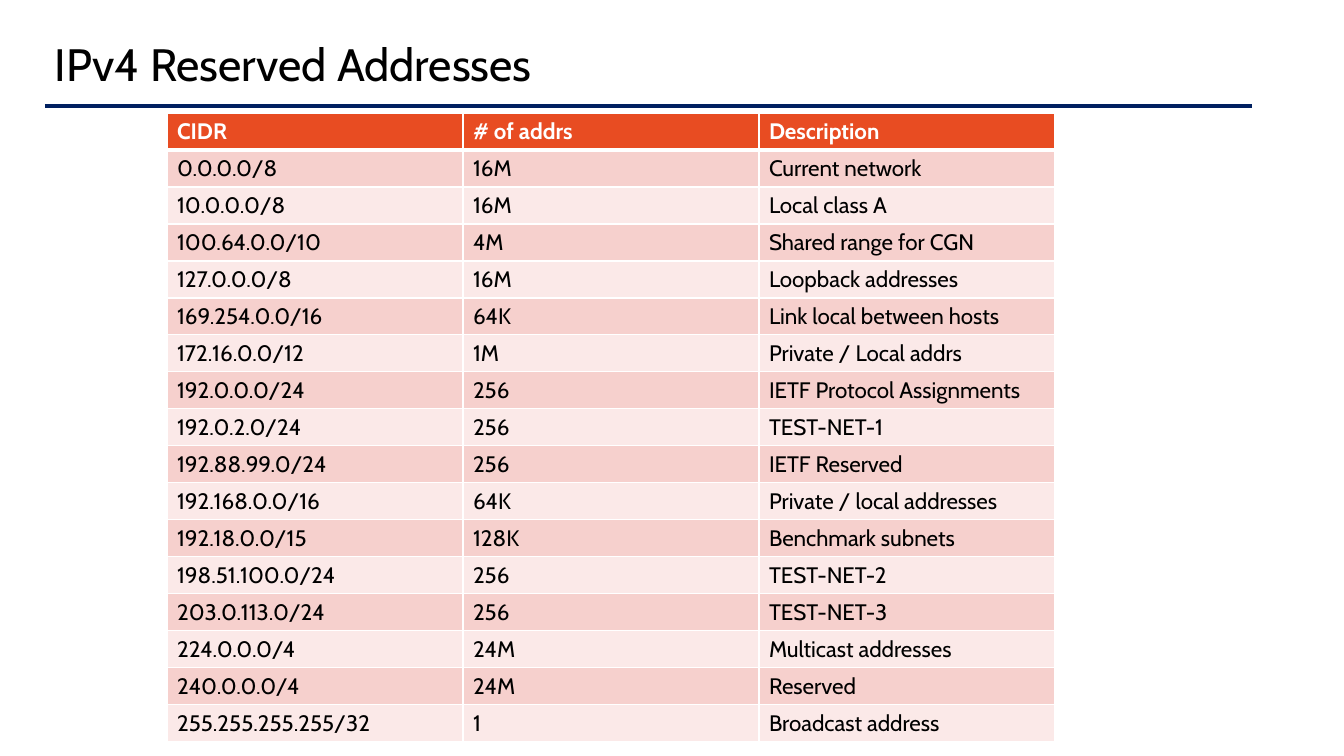
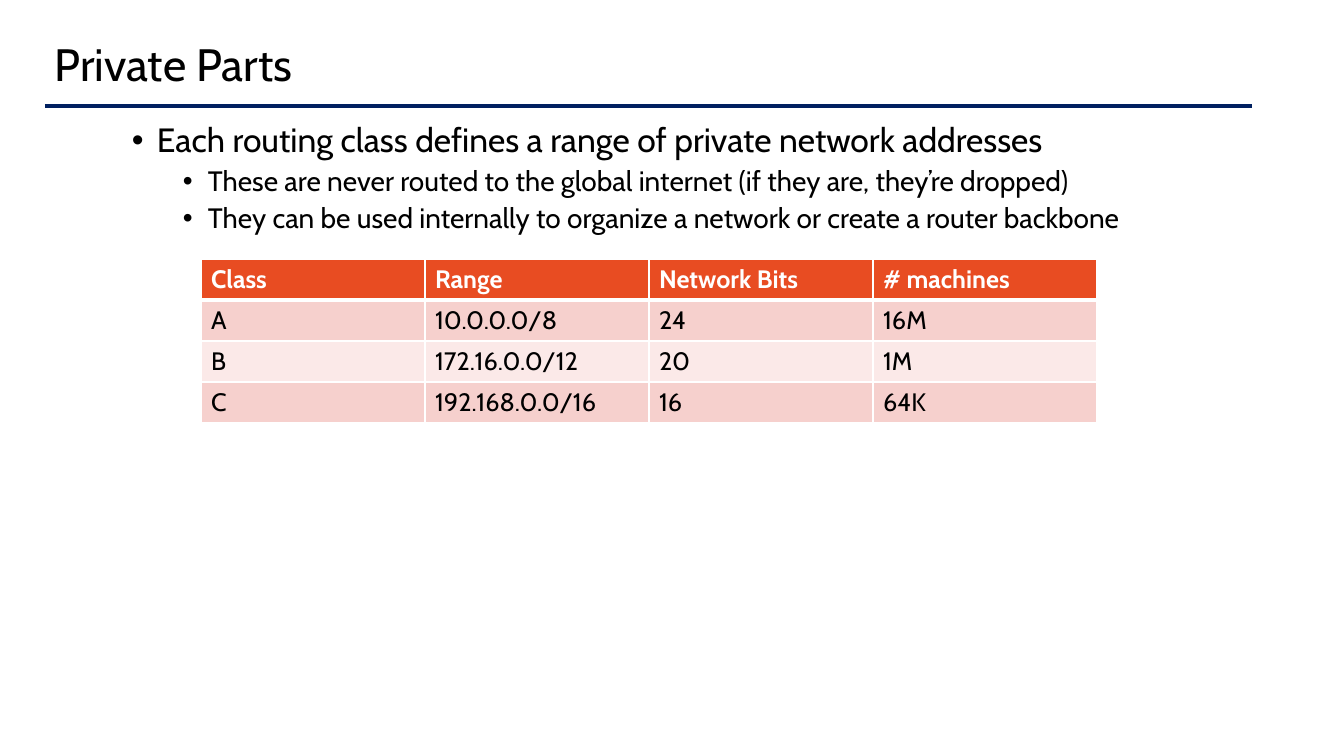
"""Build two slides on reserved and private IPv4 address ranges."""
from lxml.etree import SubElement
from pptx import Presentation
from pptx.dml.color import RGBColor
from pptx.enum.shapes import MSO_CONNECTOR as Connector
from pptx.enum.text import MSO_ANCHOR as Anchor
from pptx.oxml.ns import qn
from pptx.util import Inches, Pt

BLACK = RGBColor(0x00, 0x00, 0x00)
WHITE = RGBColor(0xFF, 0xFF, 0xFF)
NAVY = RGBColor(0x00, 0x20, 0x60)
ORANGE = RGBColor(0xE8, 0x4C, 0x22)
PINK = RGBColor(0xF6, 0xD0, 0xCD)
PALE_PINK = RGBColor(0xFB, 0xE9, 0xE8)
FONT = "Cabin"


def px(count):
    """Turn pixels into EMU."""
    return round(count * Inches(1) / 100.8)


def add_run(para, text, size, color=BLACK, bold=False):
    """Append one styled run to a paragraph."""
    span = para.add_run()
    span.text = text
    span.font.name = FONT
    span.font.size = Pt(size)
    span.font.bold = bold
    span.font.color.rgb = color


RESERVED = [
    ("CIDR", "# of addrs", "Description"),
    ("0.0.0.0/8", "16M", "Current network"),
    ("10.0.0.0/8", "16M", "Local class A"),
    ("100.64.0.0/10", "4M", "Shared range for CGN"),
    ("127.0.0.0/8", "16M", "Loopback addresses"),
    ("169.254.0.0/16", "64K", "Link local between hosts"),
    ("172.16.0.0/12", "1M", "Private / Local addrs"),
    ("192.0.0.0/24", "256", "IETF Protocol Assignments"),
    ("192.0.2.0/24", "256", "TEST-NET-1"),
    ("192.88.99.0/24", "256", "IETF Reserved"),
    ("192.168.0.0/16", "64K", "Private / local addresses"),
    ("192.18.0.0/15", "128K", "Benchmark subnets"),
    ("198.51.100.0/24", "256", "TEST-NET-2"),
    ("203.0.113.0/24", "256", "TEST-NET-3"),
    ("224.0.0.0/4", "24M", "Multicast addresses"),
    ("240.0.0.0/4", "24M", "Reserved"),
    ("255.255.255.255/32", "1", "Broadcast address"),
]
PRIVATE = [
    ("Class", "Range", "Network Bits", "# machines"),
    ("A", "10.0.0.0/8", "24", "16M"),
    ("B", "172.16.0.0/12", "20", "1M"),
    ("C", "192.168.0.0/16", "16", "64K"),
]
BULLETS = [
    (0, "Each routing class defines a range of private network addresses"),
    (1, "These are never routed to the global internet (if they are, they’re dropped)"),
    (1, "They can be used internally to organize a network or create a router backbone"),
]
SLIDES = [
    ("IPv4 Reserved Addresses", [], RESERVED, (167, 113), (296, 37), 16),
    ("Private Parts", BULLETS, PRIVATE, (201, 259), (224, 41), 18),
]
LEVELS = [(25, 24, 10), (76, 20, 5)]

deck = Presentation()
deck.slide_width, deck.slide_height = px(1344), px(756)

for title, bullets, rows, (left, top), (column_width, row_height), size in SLIDES:
    page = deck.slides.add_slide(deck.slide_layouts[6])

    rule = page.shapes.add_connector(Connector.STRAIGHT, px(45), px(106), px(1252), px(106))
    rule.line.color.rgb = NAVY
    rule.line.width = Pt(2.5)
    SubElement(rule._element.spPr, qn("a:effectLst"))

    title_box = page.shapes.add_textbox(px(45), px(40), px(1207), px(54))
    title_box.text_frame.word_wrap = True
    title_box.text_frame.vertical_anchor = Anchor.MIDDLE
    para = title_box.text_frame.paragraphs[0]
    para.line_spacing = 0.9
    add_run(para, title, 32.4)

    if bullets:
        body_box = page.shapes.add_textbox(px(122), px(119), px(1130), px(561))
        body_box.text_frame.word_wrap = True
        for index, (level, text) in enumerate(bullets):
            frame = body_box.text_frame
            para = frame.add_paragraph() if index else frame.paragraphs[0]
            indent, text_size, gap = LEVELS[level]
            para.level = level
            properties = para._p.get_or_add_pPr()
            properties.set("marL", str(px(indent)))
            properties.set("indent", str(px(-25)))
            SubElement(properties, qn("a:buFont"), typeface="Arial")
            SubElement(properties, qn("a:buChar"), char="•")
            para.line_spacing = 0.9
            if index:
                para.space_before = Pt(gap)
            add_run(para, text, text_size)

    columns = len(rows[0])
    table = page.shapes.add_table(
        len(rows), columns, px(left), px(top),
        px(column_width * columns), px(row_height * len(rows))).table
    for column in table.columns:
        column.width = px(column_width)
    for row_index, values in enumerate(rows):
        table.rows[row_index].height = px(row_height)
        header = row_index == 0
        fill = ORANGE if header else PINK if row_index % 2 else PALE_PINK
        thick_side = {0: "lnB", 1: "lnT"}.get(row_index)
        for column_index, value in enumerate(values):
            cell = table.cell(row_index, column_index)
            for side in ("lnL", "lnR", "lnT", "lnB"):
                width = Pt(3 if side == thick_side else 1)
                border = SubElement(cell._tc.get_or_add_tcPr(), qn(f"a:{side}"), w=str(width))
                solid = SubElement(border, qn("a:solidFill"))
                SubElement(solid, qn("a:srgbClr"), val=str(WHITE))
            cell.fill.solid()
            cell.fill.fore_color.rgb = fill
            add_run(cell.text_frame.paragraphs[0], value, size,
                    WHITE if header else BLACK, header)

deck.save("out.pptx")
